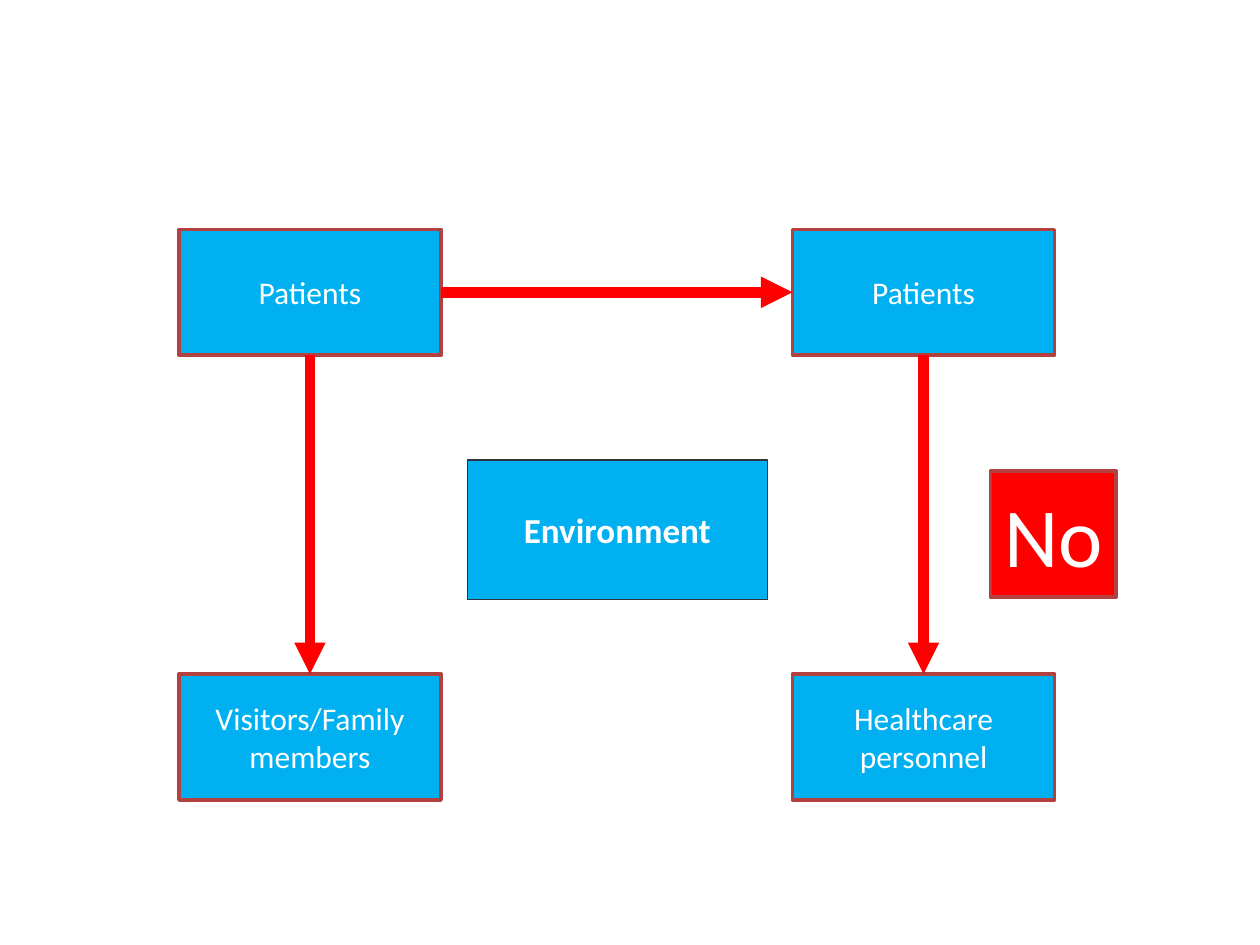
import pptx
import pptx.util
import pptx.dml.color
import pptx.enum.shapes
import pptx.enum.text
import pptx.oxml.ns
from lxml import etree

Inches, Pt = pptx.util.Inches, pptx.util.Pt
RGBColor = pptx.dml.color.RGBColor

BLUE = RGBColor(0x00, 0xB0, 0xF0)
RED = RGBColor(0xFF, 0x00, 0x00)
BORDER = RGBColor(0xB2, 0x41, 0x40)
DARK = RGBColor(0x2C, 0x34, 0x3E)
WHITE = RGBColor(0xFF, 0xFF, 0xFF)

LEFT, RIGHT = 1.42, 6.29
TOP, BOTTOM = 1.82, 5.35
BOX_W, BOX_H = 2.08, 1

prs = pptx.Presentation()
prs.slide_width, prs.slide_height = Inches(10), Inches(7.5)
s = prs.slides.add_slide(prs.slide_layouts[6])


def add_box(text, x, y, w=BOX_W, h=BOX_H, fill=BLUE, line=BORDER,
            line_width=2, size=18, bold=False):
    sp = s.shapes.add_shape(pptx.enum.shapes.MSO_SHAPE.RECTANGLE,
                            Inches(x), Inches(y), Inches(w), Inches(h))
    sp.shadow.inherit = False
    sp.fill.solid()
    sp.fill.fore_color.rgb = fill
    sp.line.color.rgb = line
    sp.line.width = Pt(line_width)
    tf = sp.text_frame
    tf.text = text
    tf.word_wrap = True
    tf.vertical_anchor = pptx.enum.text.MSO_ANCHOR.MIDDLE
    p = tf.paragraphs[0]
    p.alignment = pptx.enum.text.PP_ALIGN.CENTER
    font = p.runs[0].font
    font.name, font.size, font.bold = "Calibri", Pt(size), bold
    font.color.rgb = WHITE
    return sp


# Corner boxes
source = add_box("Patients", LEFT, TOP)
personnel = add_box("Healthcare personnel", RIGHT, BOTTOM)
visitors = add_box("Visitors/Family members", LEFT, BOTTOM)
patients = add_box("Patients", RIGHT, TOP)

# Transmission arrows, joined to the box sides
for start, start_side, end, end_side in [
    (source, 3, patients, 1),
    (patients, 2, personnel, 0),
    (source, 2, visitors, 0),
]:
    arrow = s.shapes.add_connector(
        pptx.enum.shapes.MSO_CONNECTOR.STRAIGHT, 0, 0, 0, 0)
    arrow.begin_connect(start, start_side)
    arrow.end_connect(end, end_side)
    arrow.line.color.rgb = RED
    arrow.line.width = Pt(6)
    etree.SubElement(arrow.line._get_or_add_ln(),
                     pptx.oxml.ns.qn("a:tailEnd"), type="triangle")
    etree.SubElement(arrow._element.spPr, pptx.oxml.ns.qn("a:effectLst"))

# Answer and environment boxes
add_box("No", 7.86, 3.74, w=1, fill=RED, size=48)
add_box("Environment", 3.71, 3.65, w=2.38, h=1.11, line=DARK,
        line_width=0.75, size=20, bold=True)

prs.save("out.pptx")
